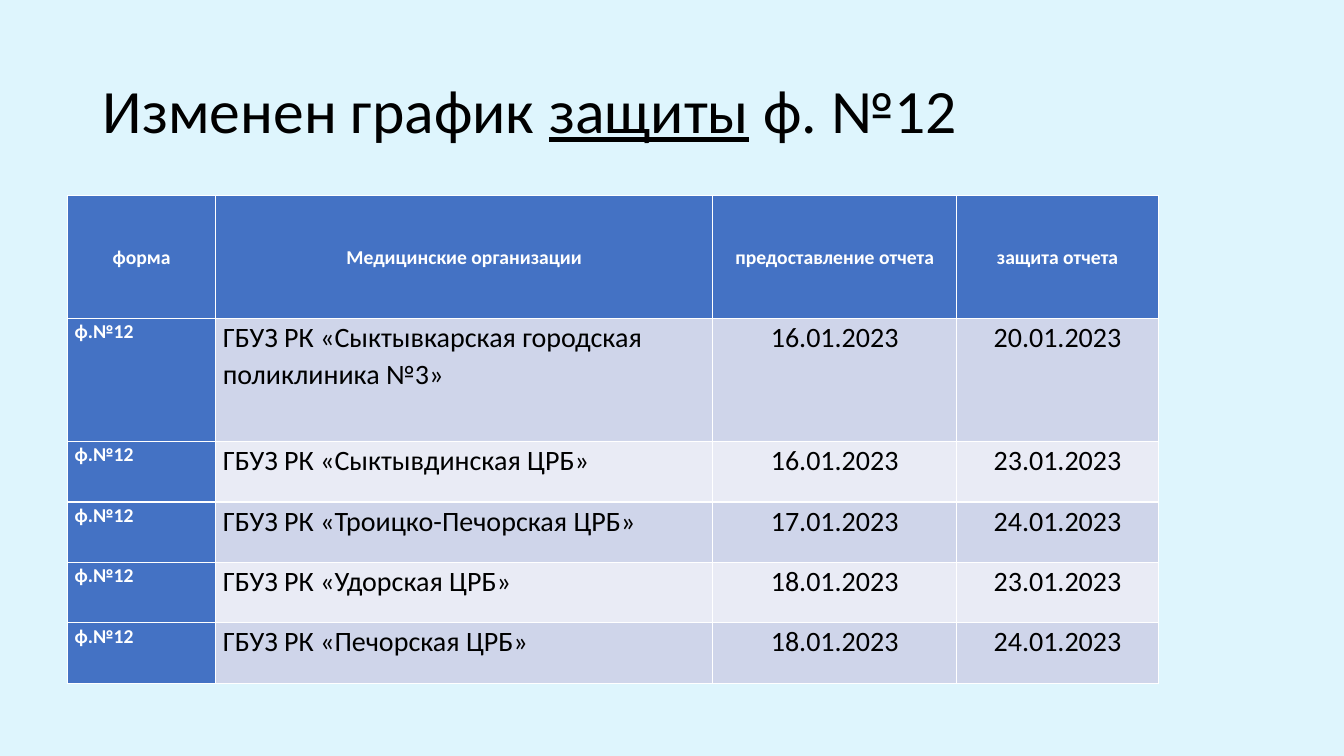
"""Builds a slide with the changed defence schedule for form No. 12."""
import dataclasses

import pptx
import pptx.dml.color
import pptx.enum.text
import pptx.util

Inches = pptx.util.Inches
Align = pptx.enum.text.PP_ALIGN
Anchor = pptx.enum.text.MSO_ANCHOR


@dataclasses.dataclass(frozen=True)
class Theme:
    font: str = "Calibri"
    background: str = "DEF5FD"
    ink: str = "000000"
    white: str = "FFFFFF"
    accent: str = "4472C4"
    bands: tuple = ("CFD5EA", "E9EBF5")
    title_size: int = 44
    label_size: int = 14
    body_size: int = 20


THEME = Theme()


def rgb(value):
    return pptx.dml.color.RGBColor.from_string(value)


def add_run(paragraph, text, size, color, bold=False, underline=False):
    run = paragraph.add_run()
    run.text = text
    run.font.name = THEME.font
    run.font.size = pptx.util.Pt(size)
    run.font.color.rgb = rgb(color)
    run.font.bold = bold
    run.font.underline = underline


deck = pptx.Presentation()
deck.slide_width, deck.slide_height = Inches(13.33), Inches(7.5)
slide = deck.slides.add_slide(deck.slide_layouts[5])
slide.background.fill.solid()
slide.background.fill.fore_color.rgb = rgb(THEME.background)

title = slide.shapes.title
title.left, title.top = Inches(0.92), Inches(0.4)
title.width, title.height = Inches(11.5), Inches(1.45)
title.text_frame.vertical_anchor = Anchor.MIDDLE
heading = title.text_frame.paragraphs[0]
heading.alignment = Align.LEFT
heading.line_spacing = 0.9
for text, underline in (("Изменен график ", False), ("защиты", True), (" ф. №12", False)):
    add_run(heading, text, THEME.title_size, THEME.ink, underline=underline)

schedule_rows = [
    ("форма", "Медицинские организации", "предоставление отчета", "защита отчета"),
    ("ф.№12", "ГБУЗ РК «Сыктывкарская городская поликлиника №3»", "16.01.2023", "20.01.2023"),
    ("ф.№12", "ГБУЗ РК «Сыктывдинская ЦРБ»", "16.01.2023", "23.01.2023"),
    ("ф.№12", "ГБУЗ РК «Троицко-Печорская ЦРБ»", "17.01.2023", "24.01.2023"),
    ("ф.№12", "ГБУЗ РК «Удорская ЦРБ»", "18.01.2023", "23.01.2023"),
    ("ф.№12", "ГБУЗ РК «Печорская ЦРБ»", "18.01.2023", "24.01.2023"),
]
column_widths = (1.47, 4.93, 2.42, 2)
row_heights = (1.22, 1.22, 0.6, 0.6, 0.6, 0.6)

schedule = slide.shapes.add_table(
    len(schedule_rows), len(column_widths),
    Inches(0.67), Inches(1.94), Inches(sum(column_widths)), Inches(sum(row_heights)),
).table
schedule.first_col = True
for column, width in zip(schedule.columns, column_widths):
    column.width = Inches(width)

for row_index, (entries, height) in enumerate(zip(schedule_rows, row_heights)):
    schedule.rows[row_index].height = Inches(height)
    for column_index, entry in enumerate(entries):
        is_header = row_index == 0
        is_label = is_header or column_index == 0
        cell = schedule.cell(row_index, column_index)
        cell.margin_left = cell.margin_right = Inches(0.07)
        cell.margin_top = cell.margin_bottom = 0
        cell.vertical_anchor = Anchor.MIDDLE if is_header else Anchor.TOP
        cell.fill.solid()
        cell.fill.fore_color.rgb = rgb(THEME.accent if is_label else THEME.bands[(row_index - 1) % 2])
        paragraph = cell.text_frame.paragraphs[0]
        paragraph.alignment = Align.CENTER if is_header or column_index > 1 else Align.LEFT
        paragraph.line_spacing = 1.07
        if is_label:
            add_run(paragraph, entry, THEME.label_size, THEME.white, bold=True)
        else:
            add_run(paragraph, entry, THEME.body_size, THEME.ink)

deck.save("out.pptx")
